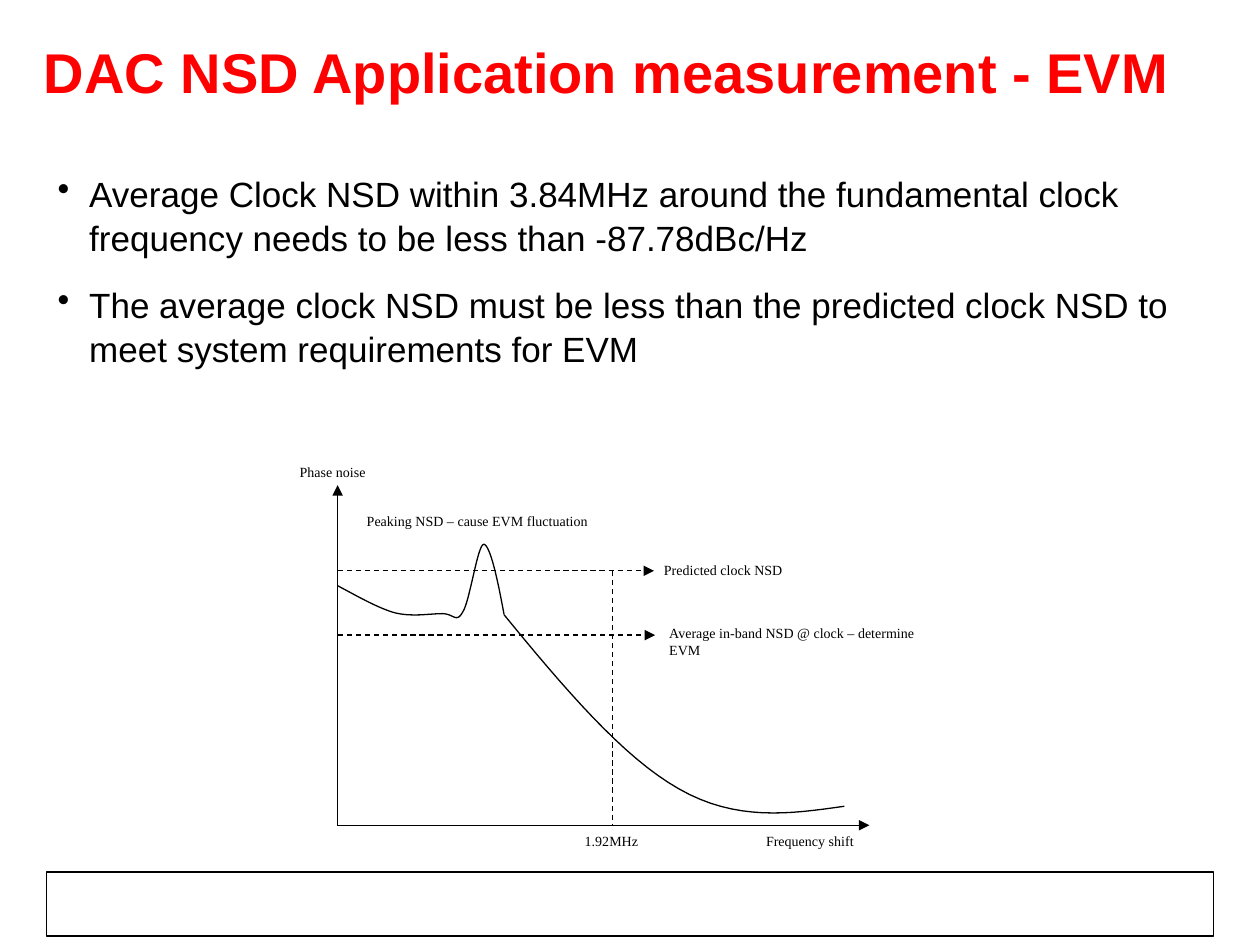
import dataclasses

import lxml.etree
import pptx
import pptx.dml.color
import pptx.enum.dml
import pptx.enum.shapes
import pptx.enum.text
import pptx.oxml.ns
import pptx.util

BLACK = "000000"
RED = "FF0000"
GRID = 100
CURVE_STEPS = 16

PEAK_CURVE = [
    (0, 29.6), (3.6, 32.6), (7.3, 35.9), (10.4, 37.4),
    (13.7, 38.9), (17.3, 37.8), (19.7, 37.8),
    (21.8, 37.8), (22.3, 40.7), (23.5, 37.4),
    (24.9, 34.1), (26.3, 17.4), (27.5, 17.4),
    (28.7, 17.8), (30.1, 27.8), (31.3, 38.1),
]
FALLING_CURVE = [
    (31.3, 38.1), (42.4, 59.3), (53.6, 80), (64.2, 89.3),
    (74.9, 98.9), (85.1, 96.7), (95.3, 94.4),
]
PLOT_LINES = [
    ((0, 100.2), (0, 0), False, True),
    ((0, 100), (100, 100), False, True),
    ((0, 25.2), (59.5, 25.2), True, True),
    ((51.7, 25.2), (51.7, 100.2), True, False),
    ((0.1, 44.1), (59.7, 44.1), True, True),
]
PLOT_LABELS = [
    ("Phase noise", -8.8, -7.4, 18.3),
    ("Peaking NSD – cause EVM fluctuation", 3.8, 7, 55.5),
    ("Predicted clock NSD", 59.7, 21.5, 28),
    ("Average in-band NSD @ clock – determine EVM", 60.7, 40, 49.8),
    ("1.92MHz", 44.8, 101.1, 13.8),
    ("Frequency shift", 78.9, 101.1, 24.4),
]
LABEL_ROWS = 7.8
BULLETS = [
    "Average Clock NSD within 3.84MHz around the fundamental clock "
    "frequency needs to be less than -87.78dBc/Hz",
    "The average clock NSD must be less than the predicted clock NSD "
    "to meet system requirements for EVM",
]


@dataclasses.dataclass
class Box:
    """A region in inches, divided into a grid of GRID columns and rows."""
    left: float
    top: float
    width: float
    height: float

    def point(self, column, row):
        """Return the slide position of a grid point."""
        return (pptx.util.Inches(self.left + self.width * column / GRID),
                pptx.util.Inches(self.top + self.height * row / GRID))

    def area(self, column=0, row=0, columns=GRID, rows=GRID):
        """Return left, top, width and height of a block of the grid."""
        return (*self.point(column, row),
                pptx.util.Inches(self.width * columns / GRID),
                pptx.util.Inches(self.height * rows / GRID))


def color(value):
    """Turn a hex string into a colour."""
    return pptx.dml.color.RGBColor.from_string(value)


def style_line(line):
    """Give a line the thin black stroke used throughout."""
    line.color.rgb = color(BLACK)
    line.width = pptx.util.Pt(0.75)


def add_text_frame(shapes, area, insets=(0.1, 0.05)):
    """Add a wrapping text box and return its text frame."""
    frame = shapes.add_textbox(*area).text_frame
    frame.word_wrap = True
    frame.margin_left = frame.margin_right = pptx.util.Inches(insets[0])
    frame.margin_top = frame.margin_bottom = pptx.util.Inches(insets[1])
    return frame


def add_run(paragraph, text, size, name="Arial", hex_color=BLACK, bold=False):
    """Add one styled run to a paragraph."""
    run = paragraph.add_run()
    run.text = text
    run.font.size = pptx.util.Pt(size)
    run.font.name = name
    run.font.bold = bold
    run.font.color.rgb = color(hex_color)


def add_bullet(paragraph):
    """Give a paragraph a hanging round bullet."""
    properties = paragraph._p.get_or_add_pPr()
    indent = pptx.util.Inches(0.25)
    properties.set("marL", str(indent))
    properties.set("indent", str(-indent))
    lxml.etree.SubElement(properties, pptx.oxml.ns.qn("a:buChar"), char="•")


def add_line(shapes, start, end, dashed, arrow):
    """Add a straight line, optionally dashed or with an arrowhead."""
    connector = shapes.add_connector(
        pptx.enum.shapes.MSO_CONNECTOR.STRAIGHT, *start, *end)
    style_line(connector.line)
    if dashed:
        connector.line.dash_style = pptx.enum.dml.MSO_LINE.DASH
    if arrow:
        lxml.etree.SubElement(connector.line._get_or_add_ln(),
                              pptx.oxml.ns.qn("a:tailEnd"), type="triangle")
    lxml.etree.SubElement(connector._element.spPr,
                          pptx.oxml.ns.qn("a:effectLst"))


def bezier_points(controls):
    """Sample a chain of cubic curves that share their end points."""
    points = [controls[0]]
    for first in range(0, len(controls) - 1, 3):
        segment = controls[first:first + 4]
        for step in range(1, CURVE_STEPS + 1):
            t = step / CURVE_STEPS
            weights = ((1 - t) ** 3, 3 * t * (1 - t) ** 2,
                       3 * t ** 2 * (1 - t), t ** 3)
            points.append(tuple(
                sum(weight * value for weight, value in zip(weights, axis))
                for axis in zip(*segment)))
    return points


def add_curve(shapes, box, controls):
    """Add an open, unfilled curve."""
    points = [box.point(*point) for point in bezier_points(controls)]
    builder = shapes.build_freeform(*points[0])
    builder.add_line_segments(points[1:], close=False)
    curve = builder.convert_to_shape()
    curve.shadow.inherit = False
    curve.fill.background()
    style_line(curve.line)


def add_footer(slide, box):
    """Add the empty outlined footer bar."""
    bar = slide.shapes.add_shape(
        pptx.enum.shapes.MSO_SHAPE.RECTANGLE, *box.area())
    bar.shadow.inherit = False
    bar.fill.background()
    style_line(bar.line)


def add_title(slide, box):
    """Add the slide title."""
    frame = add_text_frame(slide.shapes, box.area())
    frame.vertical_anchor = pptx.enum.text.MSO_ANCHOR.MIDDLE
    paragraph = frame.paragraphs[0]
    paragraph.line_spacing = 0.85
    add_run(paragraph, "DAC NSD Application measurement - EVM", 32,
            hex_color=RED, bold=True)


def add_body(slide, box):
    """Add the bulleted statements."""
    frame = add_text_frame(slide.shapes, box.area())
    for index, text in enumerate(BULLETS):
        paragraph = frame.add_paragraph() if index else frame.paragraphs[0]
        add_bullet(paragraph)
        paragraph.line_spacing = 1.05
        paragraph.space_before = pptx.util.Pt(13 if index else 0)
        add_run(paragraph, text, 20)


def add_noise_plot(slide, box):
    """Add the phase noise sketch with its axes, curves and labels."""
    shapes = slide.shapes.add_group_shape().shapes
    for start, end, dashed, arrow in PLOT_LINES:
        add_line(shapes, box.point(*start), box.point(*end), dashed, arrow)
    for controls in (PEAK_CURVE, FALLING_CURVE):
        add_curve(shapes, box, controls)
    for text, column, row, columns in PLOT_LABELS:
        area = box.area(column, row, columns, LABEL_ROWS)
        frame = add_text_frame(shapes, area, (0.07, 0.03))
        add_run(frame.paragraphs[0], text, 8, "Times New Roman")


def main():
    """Build and save the slide."""
    presentation = pptx.Presentation()
    presentation.slide_width = pptx.util.Inches(10)
    presentation.slide_height = pptx.util.Inches(7.5)
    slide = presentation.slides.add_slide(presentation.slide_layouts[6])
    add_footer(slide, Box(0.37, 6.92, 9.26, 0.51))
    add_title(slide, Box(0.25, 0.16, 9.25, 0.89))
    add_body(slide, Box(0.36, 1.3, 9.26, 1.67))
    add_noise_plot(slide, Box(2.68, 3.85, 4.22, 2.7))
    presentation.save("out.pptx")


if __name__ == "__main__":
    main()
